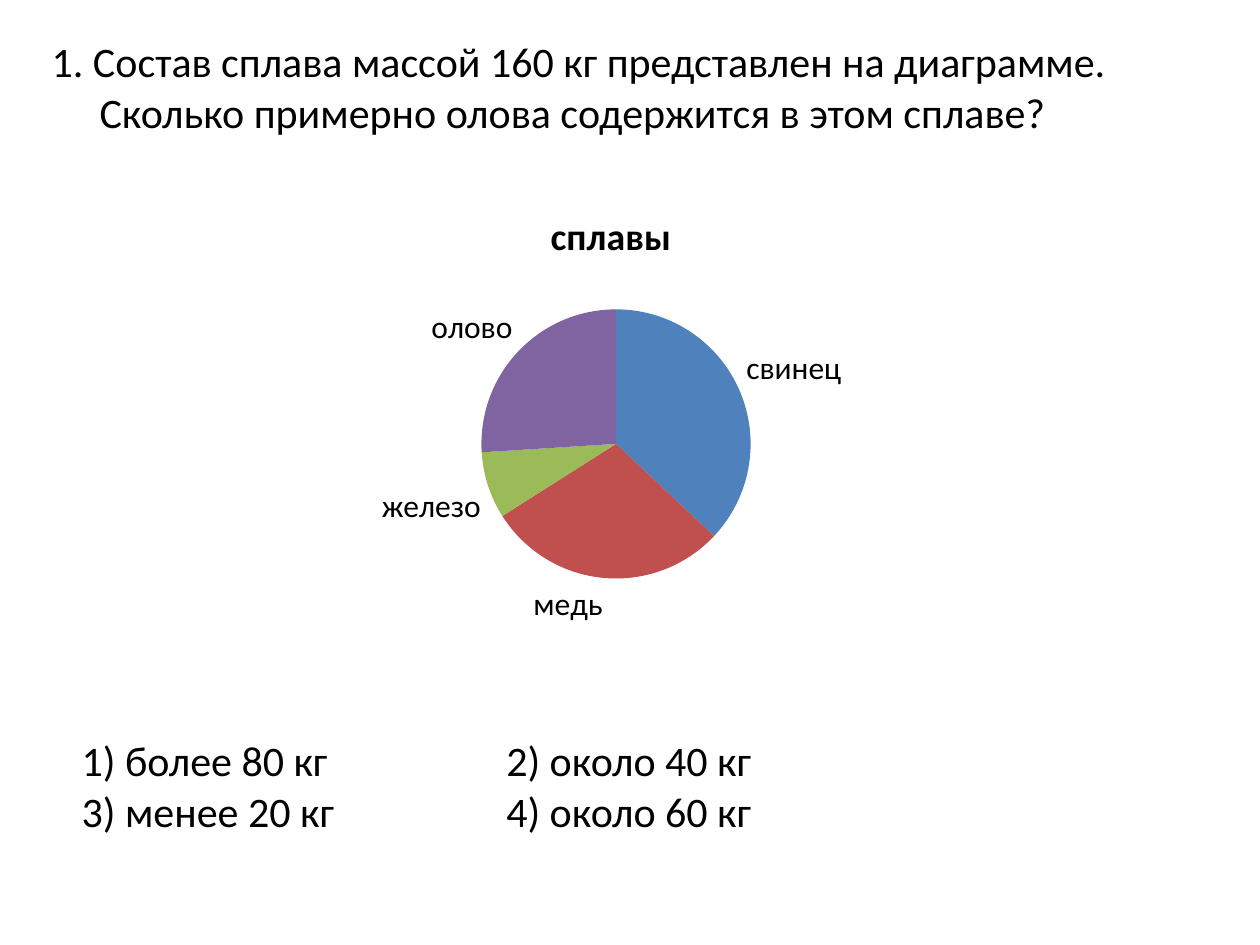
from lxml import etree
from pptx import Presentation
from pptx import util as u
from pptx.chart.data import CategoryChartData
from pptx.dml.color import RGBColor
from pptx.enum import chart as ch, text
from pptx.oxml.ns import qn

FONT = "Calibri"
BLACK = "000000"
QUESTION = ("1. Состав сплава массой 160 кг представлен на диаграмме. "
            "Сколько примерно олова содержится в этом сплаве?")
ANSWERS = [("1) более 80 кг", "2) около 40 кг"),
           ("3) менее 20 кг", "4) около 60 кг")]
TITLE = "сплавы"
METALS = [("свинец", 37, "4F81BD"), ("медь", 29, "C0504D"),
          ("железо", 8, "9BBB59"), ("олово", 26, "8064A2")]
PIE_SHARES = {"x": 0.37, "y": 0.27, "w": 0.27, "h": 0.59}
W, H = 10, 7.5


def color(value):
    return RGBColor.from_string(value)


def style(font, size, bold=False):
    font.name, font.size, font.bold = FONT, u.Pt(size), bold
    font.color.rgb = color(BLACK)


def add_run(p, words, size, bold=False):
    r = p.add_run()
    r.text = words
    style(r.font, size, bold)


def box(x, y, w, h):
    return [u.Inches(v) for v in (x * W, y * H, w * W, h * H)]


def add_question(s):
    sp = s.placeholders[1]
    sp.left, sp.top, sp.width, sp.height = box(0.031, 0.031, 0.9, 0.136)
    tf = sp.text_frame
    tf.auto_size = text.MSO_AUTO_SIZE.NONE
    p = tf.paragraphs[0]
    add_run(p, QUESTION, 24)
    p.space_before = u.Pt(4.8)
    pPr = p._p.get_or_add_pPr()
    pPr.set("marL", str(u.Inches(0.38)))
    pPr.set("indent", str(-u.Inches(0.38)))
    etree.SubElement(pPr, qn("a:buNone"))


def add_answers(s):
    tf = s.shapes.add_textbox(*box(0.055, 0.771, 0.914, 0.175)).text_frame
    tf.word_wrap = True
    for i, row in enumerate(ANSWERS):
        p = tf.add_paragraph() if i else tf.paragraphs[0]
        add_run(p, "\t".join(row), 24)
        tabs = etree.SubElement(p._p.get_or_add_pPr(), qn("a:tabLst"))
        etree.SubElement(tabs, qn("a:tab"), pos=str(u.Inches(3.37)), algn="l")


def place_plot(chart):
    area = chart._chartSpace.chart.plotArea
    for old in area.findall(qn("c:layout")):
        area.remove(old)
    layout = etree.Element(qn("c:layout"))
    area.insert(0, layout)
    manual = etree.SubElement(layout, qn("c:manualLayout"))
    etree.SubElement(manual, qn("c:layoutTarget"), val="inner")
    for axis in "xy":
        etree.SubElement(manual, qn(f"c:{axis}Mode"), val="edge")
    for key, share in PIE_SHARES.items():
        etree.SubElement(manual, qn(f"c:{key}"), val=str(share))


def add_pie(s):
    data = CategoryChartData()
    data.categories = [str(i + 1) for i in range(len(METALS))]
    data.add_series(TITLE, [value for _, value, _ in METALS])
    chart = s.shapes.add_chart(ch.XL_CHART_TYPE.PIE,
                               *box(0.086, 0.197, 0.798, 0.483), data).chart
    style(chart.font, 18)
    chart.has_legend = False
    chart.has_title = True
    add_run(chart.chart_title.text_frame.paragraphs[0], TITLE, 21.6, True)
    plot = chart.plots[0]
    plot.vary_by_categories = True
    labels = plot.series[0].data_labels
    labels.show_percentage = True
    labels.show_value = False
    labels.position = ch.XL_LABEL_POSITION.OUTSIDE_END
    for i, (name, _, fill) in enumerate(METALS):
        point = plot.series[0].points[i]
        point.format.fill.solid()
        point.format.fill.fore_color.rgb = color(fill)
        add_run(point.data_label.text_frame.paragraphs[0], name, 18)
        point.data_label.position = ch.XL_LABEL_POSITION.OUTSIDE_END
    place_plot(chart)


def main():
    prs = Presentation()
    prs.slide_width, prs.slide_height = u.Inches(W), u.Inches(H)
    s = prs.slides.add_slide(prs.slide_layouts[1])
    title = s.shapes.title._element
    title.getparent().remove(title)
    add_question(s)
    add_answers(s)
    add_pie(s)
    prs.save("out.pptx")


if __name__ == "__main__":
    main()
